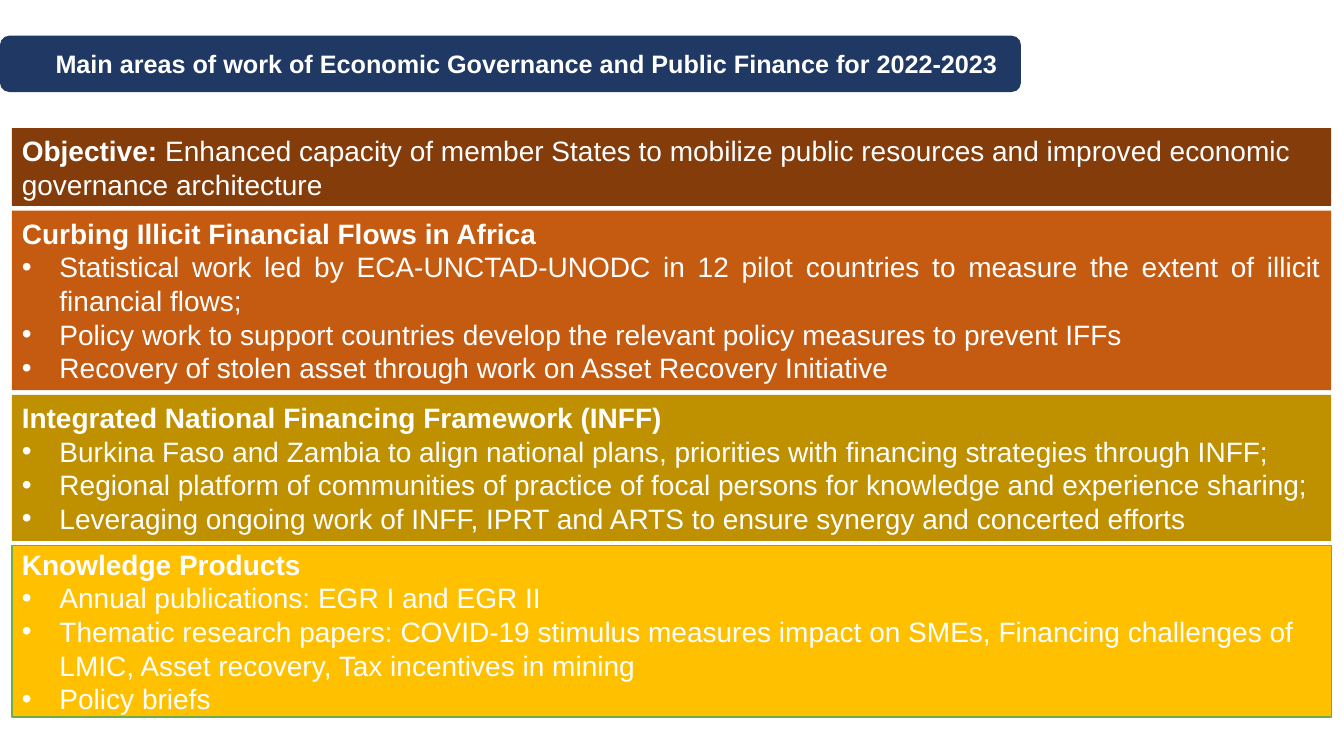
from dataclasses import dataclass

from lxml.etree import SubElement
from pptx import Presentation
from pptx.dml.color import RGBColor
from pptx.enum.shapes import MSO_SHAPE as Shape
from pptx.enum.text import MSO_ANCHOR as Anchor, PP_ALIGN as Align
from pptx.oxml.ns import qn
from pptx.util import Cm, Pt

FONT = "Arial"
WHITE = "FFFFFF"
BAND_LEFT, BAND_TOP, BAND_WIDTH, BAND_GAP = 0.3, 3.23, 33.25, 0.12
BULLET_INDENT = 0.95


@dataclass
class Band:
    heading: str
    height: float
    fill: str
    bullets: tuple[str, ...] = ()
    body: str = ""
    align: Align = Align.JUSTIFY
    line: str = ""


BANDS = [
    Band("Objective: ", 1.96, "843C0B",
         body="Enhanced capacity of member States to mobilize public resources "
              "and improved economic governance architecture"),
    Band("Curbing Illicit Financial Flows in Africa", 4.52, "C55A11", (
        "Statistical work led by ECA-UNCTAD-UNODC in 12 pilot countries to measure "
        "the extent of illicit financial flows;",
        "Policy work to support countries develop the relevant policy measures to prevent IFFs",
        "Recovery of stolen asset through work on Asset Recovery Initiative",
    )),
    Band("Integrated National Financing Framework (INFF)", 3.68, "BF9000", (
        "Burkina Faso and Zambia to align national plans, priorities with financing "
        "strategies through INFF;",
        "Regional platform of communities of practice of focal persons for knowledge "
        "and experience sharing;",
        "Leveraging ongoing work of INFF, IPRT and ARTS to ensure synergy and concerted efforts",
    )),
    Band("Knowledge Products", 4.32, "FFC000", (
        "Annual publications: EGR I and EGR II",
        "Thematic research papers: COVID-19 stimulus measures impact on SMEs, "
        "Financing challenges of LMIC, Asset recovery, Tax incentives in mining",
        "Policy briefs",
    ), align=Align.LEFT, line="70AD47"),
]


def color(value: str) -> RGBColor:
    return RGBColor.from_string(value)


def add_box(s, kind: Shape, left: float, top: float, width: float, height: float,
            fill: str, line: str = ""):
    sp = s.shapes.add_shape(kind, Cm(left), Cm(top), Cm(width), Cm(height))
    sp.shadow.inherit = False
    sp.fill.solid()
    sp.fill.fore_color.rgb = color(fill)
    if line:
        sp.line.color.rgb = color(line)
        sp.line.width = Pt(1)
    else:
        sp.line.fill.background()
    sp.text_frame.word_wrap = True
    sp.text_frame.vertical_anchor = Anchor.MIDDLE
    return sp


def format_run(r, size: float, bold: bool) -> None:
    r.font.name = FONT
    r.font.size = Pt(size)
    r.font.bold = bold
    r.font.color.rgb = color(WHITE)


def set_indent(p, left: float, first: float = 0) -> None:
    pPr = p._p.get_or_add_pPr()
    pPr.set("marL", str(Cm(left)))
    pPr.set("indent", str(Cm(first)))


def add_bullet(tf, text: str, align: Align) -> None:
    p = tf.add_paragraph()
    p.text = text
    p.alignment = align
    set_indent(p, BULLET_INDENT, -BULLET_INDENT)
    pPr = p._p.get_or_add_pPr()
    SubElement(pPr, qn("a:buFont"), typeface=FONT)
    SubElement(pPr, qn("a:buChar"), char="•")
    format_run(p.runs[0], 20, False)


def add_title(s) -> None:
    sp = add_box(s, Shape.ROUNDED_RECTANGLE, 0, 0.9, 25.73, 1.42, "203864")
    p = sp.text_frame.paragraphs[0]
    p.text = "Main areas of work of Economic Governance and Public Finance for 2022-2023"
    p.alignment = Align.CENTER
    set_indent(p, 0.82)
    format_run(p.runs[0], 18, True)


def add_band(s, band: Band, top: float) -> None:
    sp = add_box(s, Shape.RECTANGLE, BAND_LEFT, top, BAND_WIDTH, band.height,
                 band.fill, band.line)
    tf = sp.text_frame
    p = tf.paragraphs[0]
    p.text = band.heading
    p.alignment = Align.LEFT
    format_run(p.runs[0], 20, True)
    if band.body:
        r = p.add_run()
        r.text = band.body
        format_run(r, 20, False)
    for bullet in band.bullets:
        add_bullet(tf, bullet, band.align)


def main() -> None:
    prs = Presentation()
    prs.slide_width, prs.slide_height = Cm(33.87), Cm(19.05)
    s = prs.slides.add_slide(prs.slide_layouts[6])
    add_title(s)
    top = BAND_TOP
    for band in BANDS:
        add_band(s, band, top)
        top += band.height + BAND_GAP
    prs.save("out.pptx")


if __name__ == "__main__":
    main()
